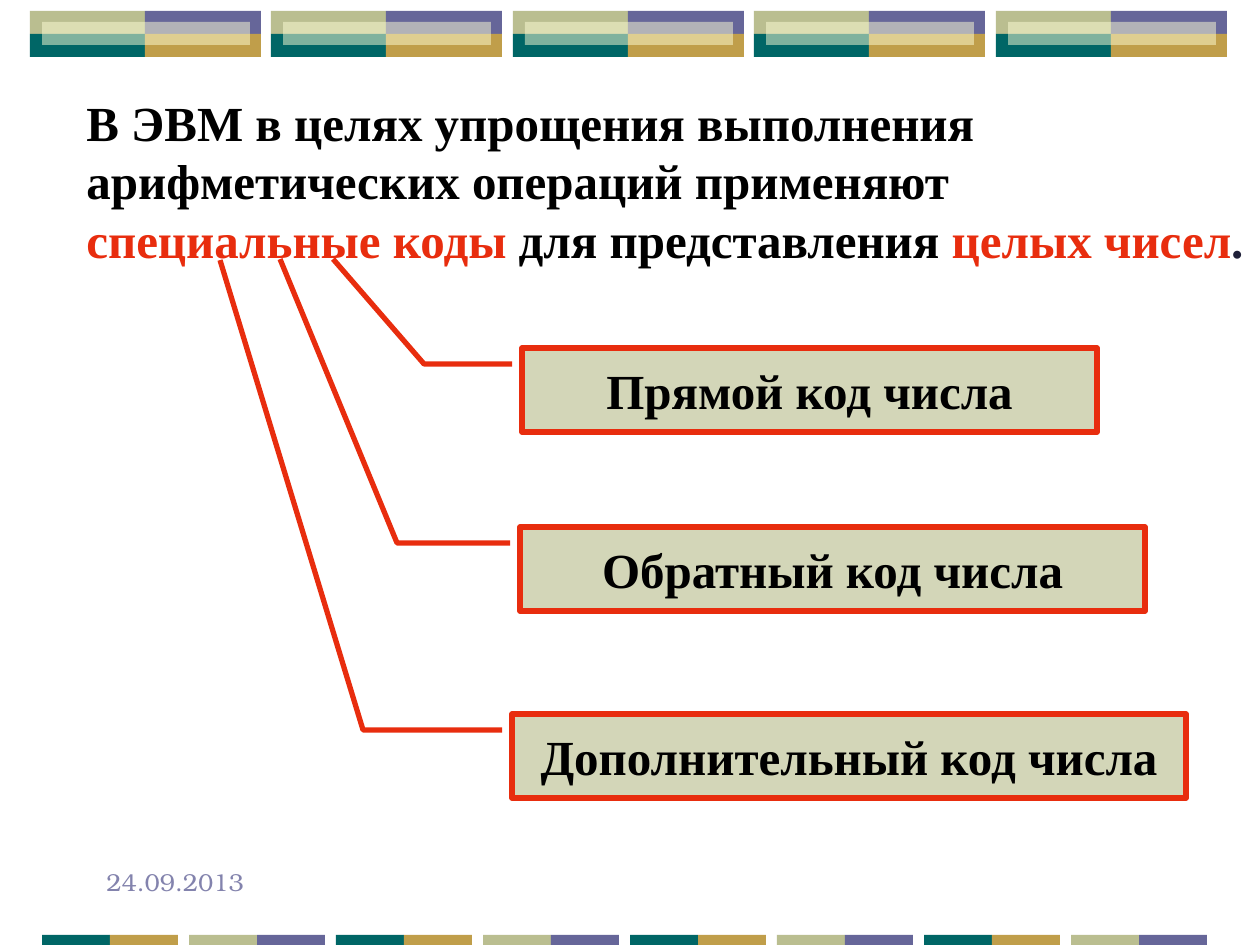
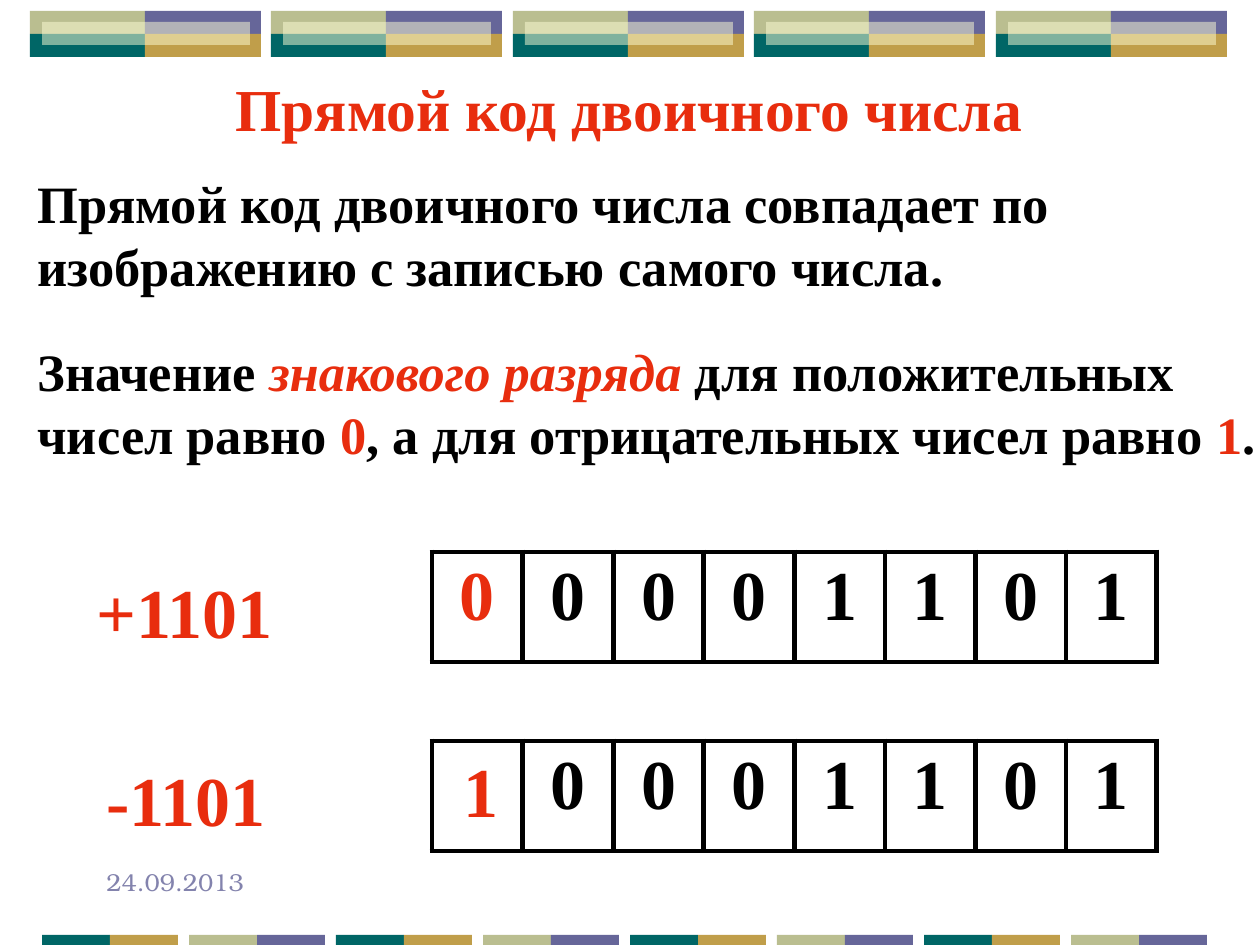
from dataclasses import dataclass

from lxml import etree
from pptx import Presentation
from pptx.dml.color import RGBColor
from pptx.enum.shapes import MSO_SHAPE
from pptx.enum.text import MSO_ANCHOR, PP_ALIGN
from pptx.oxml.ns import qn
from pptx.util import Emu, Pt

RECTANGLE = MSO_SHAPE.RECTANGLE
CALLOUT = MSO_SHAPE.LINE_CALLOUT_2
LEFT, CENTER = PP_ALIGN.LEFT, PP_ALIGN.CENTER
TOP, MIDDLE = MSO_ANCHOR.TOP, MSO_ANCHOR.MIDDLE
PX_PER_INCH = 126


@dataclass(frozen=True)
class Theme:
    text: str = "000000"
    accent: str = "E82D0E"
    full_stop: str = "1F2039"
    callout_fill: str = "D3D6B8"
    date: str = "8383AD"
    violet: str = "666699"
    gold: str = "C09E4A"
    teal: str = "006666"
    olive: str = "BABE90"
    glaze: str = "FEFED6"
    font: str = "Times New Roman"
    date_font: str = "TeX Gyre Bonum"
    date_size: int = 14
    lead_size: int = 28
    body_size: int = 30
    title_size: int = 34
    digit_size: int = 40
    line_height: float = 1.2
    line_width: int = 3


THEME = Theme()


def px(length):
    return Emu(round(length * 914400 / PX_PER_INCH))


def to_emu(box):
    return [px(length) for length in box]


# Text helpers
def format_run(run, size, color, italic=False):
    font = run.font
    font.name, font.size = THEME.font, Pt(size)
    font.bold, font.italic = True, italic
    font.color.rgb = RGBColor.from_string(color)


def write_runs(paragraph, pieces, size, align=LEFT):
    """Each piece is (text, color) or (text, color, italic); "\n" breaks the line."""
    paragraph.alignment = align
    paragraph.line_spacing = Pt(size * THEME.line_height)
    for text, *style in pieces:
        if text == "\n":
            paragraph.add_line_break()
            continue
        run = paragraph.add_run()
        run.text = text
        format_run(run, size, *style)


def add_text(slide, box, paragraphs, size, align=LEFT, gap=0):
    text_frame = slide.shapes.add_textbox(*to_emu(box)).text_frame
    text_frame.word_wrap = True
    text_frame.vertical_anchor = TOP
    for index, pieces in enumerate(paragraphs):
        paragraph = text_frame.add_paragraph() if index else text_frame.paragraphs[0]
        write_runs(paragraph, pieces, size, align)
        if index:
            paragraph.space_before = Pt(gap)


# Bands and date shared by the slides
def add_tile(slide, box, color, opacity=None):
    shape = slide.shapes.add_shape(RECTANGLE, *to_emu(box))
    shape.shadow.inherit = False
    shape.line.fill.background()
    shape.fill.solid()
    shape.fill.fore_color.rgb = RGBColor.from_string(color)
    if opacity is not None:
        color_element = next(shape._element.spPr.iter(qn("a:srgbClr")))
        etree.SubElement(color_element, qn("a:alpha")).set("val", str(opacity * 1000))


def add_top_band(slide, left, top):
    width, height = 115, 23
    colors = ((THEME.olive, THEME.violet), (THEME.teal, THEME.gold))
    for block in range(5):
        block_left = left + block * 483 // 2
        for row, row_colors in enumerate(colors):
            for column, color in enumerate(row_colors):
                add_tile(slide, (block_left + column * width, top + row * height,
                                 width + column, height), color)
        add_tile(slide, (block_left + 12, top + 11, 208, height), THEME.glaze, 50)


def add_bottom_band(slide, left, top):
    width, height, pitch = 68, 10, 147
    pairs = ((THEME.teal, THEME.gold), (THEME.olive, THEME.violet))
    for block in range(8):
        for column, color in enumerate(pairs[block % 2]):
            add_tile(slide, (left + block * pitch + column * width, top, width, height), color)


def add_date(slide, box):
    text_frame = slide.shapes.add_textbox(*to_emu(box)).text_frame
    text_frame.word_wrap = True
    text_frame.text = "24.09.2013"
    font = text_frame.paragraphs[0].runs[0].font
    font.name, font.size = THEME.date_font, Pt(THEME.date_size)
    font.color.rgb = RGBColor.from_string(THEME.date)


def add_base_slide(presentation):
    slide = presentation.slides.add_slide(presentation.slide_layouts[6])
    add_top_band(slide, 30, 11)
    add_bottom_band(slide, 42, 935)
    add_date(slide, (94, 861, 262, 63))
    return slide


# Slide 1: kinds of codes
def add_code_callout(slide, box, text, elbow, tip):
    """The leader runs from the box to the elbow (x) and on to the tip (x, y)."""
    width, height = box[2:]
    leader = ((-10, 16), (elbow, 16), tip)
    shape = slide.shapes.add_shape(CALLOUT, *to_emu(box))
    shape.shadow.inherit = False
    for index, (x, y) in enumerate(leader):
        shape.adjustments[2 * index] = y / height
        shape.adjustments[2 * index + 1] = x / width
    shape.fill.solid()
    shape.fill.fore_color.rgb = RGBColor.from_string(THEME.callout_fill)
    shape.line.color.rgb = RGBColor.from_string(THEME.accent)
    shape.line.width = Pt(THEME.line_width)
    text_frame = shape.text_frame
    text_frame.word_wrap = True
    text_frame.vertical_anchor = MIDDLE
    write_runs(text_frame.paragraphs[0], [(text, THEME.text)], THEME.lead_size, CENTER)


def build_codes_slide(presentation):
    slide = add_base_slide(presentation)
    lead = [
        ("В ЭВМ в целях упрощения выполнения арифметических операций применяют", THEME.text),
        ("\n",),
        ("специальные коды ", THEME.accent),
        ("для представления ", THEME.text),
        ("целых чисел", THEME.accent),
        (".", THEME.full_stop),
    ]
    add_text(slide, (74, 86, 1186, 189), [lead], THEME.lead_size)
    callouts = (
        ((522, 348, 575, 84), "Прямой код числа", -98, (-189, -89)),
        ((520, 527, 625, 84), "Обратный код числа", -123, (-240, -268)),
        ((512, 714, 674, 84), "Дополнительный код числа", -149, (-292, -454)),
    )
    for callout in callouts:
        add_code_callout(slide, *callout)


# Slide 2: direct code
def set_cell_borders(cell):
    properties = cell._tc.get_or_add_tcPr()
    for index, side in enumerate(("lnL", "lnR", "lnT", "lnB")):
        line = etree.Element(qn(f"a:{side}"), w=str(Pt(THEME.line_width)))
        fill = etree.SubElement(line, qn("a:solidFill"))
        etree.SubElement(fill, qn("a:srgbClr")).set("val", THEME.text)
        properties.insert(index, line)


def add_bit_table(slide, box, bits):
    """A space in bits leaves its cell empty; the first cell is the sign bit."""
    table = slide.shapes.add_table(1, len(bits), *to_emu(box)).table
    table.first_row = table.horz_banding = False
    for column, bit in enumerate(bits):
        cell = table.cell(0, column)
        cell.fill.background()
        set_cell_borders(cell)
        cell.margin_top = cell.margin_bottom = 0
        cell.vertical_anchor = TOP
        if bit != " ":
            color = THEME.text if column else THEME.accent
            write_runs(cell.text_frame.paragraphs[0], [(bit, color)],
                       THEME.digit_size, CENTER)


def build_direct_code_slide(presentation):
    slide = add_base_slide(presentation)
    text, accent = THEME.text, THEME.accent
    body = [
        [("Прямой код двоичного числа совпадает по изображению с записью самого числа.", text)],
        [
            ("Значение ", text),
            ("знакового разряда", accent, True),
            (" для положительных чисел равно ", text),
            ("0", accent),
            (", а для отрицательных чисел равно ", text),
            ("1", accent),
            (".", text),
        ],
    ]
    add_text(slide, (25, 165, 1260, 306), body, THEME.body_size, gap=24)
    add_text(slide, (54, 66, 1150, 84), [[("Прямой код двоичного числа", accent)]],
             THEME.title_size, CENTER)
    # Numbers and their bits
    add_text(slide, (84, 562, 248, 97), [[("+1101", accent)]], THEME.digit_size)
    add_text(slide, (94, 750, 268, 97), [[("-1101", accent)]], THEME.digit_size)
    add_bit_table(slide, (432, 552, 725, 110), "00001101")
    add_bit_table(slide, (432, 741, 725, 110), " 0001101")
    # Sign bit of the negative number
    add_text(slide, (451, 741, 60, 97), [[("1", accent)]], THEME.digit_size)


def main():
    presentation = Presentation()
    presentation.slide_width, presentation.slide_height = px(1260), px(945)
    build_codes_slide(presentation)
    build_direct_code_slide(presentation)
    presentation.save("out.pptx")


if __name__ == "__main__":
    main()
